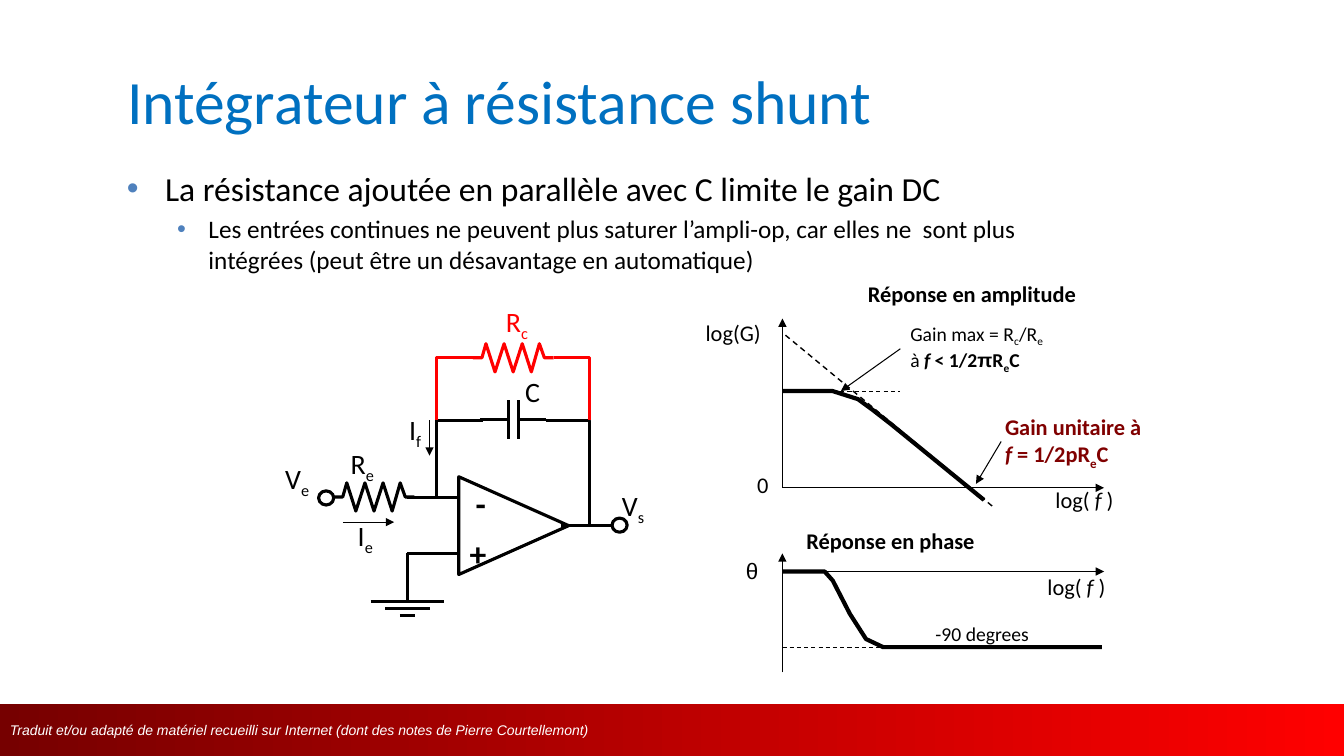
"""Build the slide on the integrator with a shunt resistor: circuit and frequency response."""
from dataclasses import dataclass

from lxml import etree
from pptx import Presentation
from pptx import util as u
from pptx.dml.color import RGBColor
from pptx.enum import dml, shapes, text
from pptx.oxml import ns


@dataclass(frozen=True)
class Theme:
    """Colours, fonts and sizes of the slide."""
    font: str = "Calibri"
    alt_font: str = "Arial"
    ink: str = "000000"
    title: str = "0070C0"
    bullet: str = "4F81BD"
    shunt: str = "FF0000"
    unity: str = "800000"
    dark: str = "760000"
    paper: str = "FFFFFF"
    title_size: int = 44
    body: int = 24
    sub_body: int = 18
    sign: int = 24
    symbol: int = 20
    label: int = 16
    note: int = 14
    footer: int = 10
    thin: float = 0.75
    guide: float = 1
    wire: float = 2.25
    curve: float = 3


T = Theme()
TITLE = "Intégrateur à résistance shunt"
FOOTER = "Traduit et/ou adapté de matériel recueilli sur Internet (dont des notes de Pierre Courtellemont)"
BODY = [
    ("La résistance ajoutée en parallèle avec C limite le gain DC", T.body, 0.38, 0.38),
    ("Les entrées continues ne peuvent plus saturer l’ampli-op, car elles ne  sont plus "
     "intégrées (peut être un désavantage en automatique)", T.sub_body, 0.81, 0.31),
]
LOG_F = [[("log( ", ""), ("f ", "i"), (")", "")]]
LABELS = [
    (6.9, 3.12, 0.75, 0.37, T.label, T.ink, [[("log(G)", "")]]),
    (10.37, 4.77, 0.78, 0.37, T.label, T.ink, LOG_F),
    (10.29, 5.64, 0.78, 0.37, T.label, T.ink, LOG_F),
    (9.87, 4.05, 1.56, 0.64, T.label, T.unity,
     [[("Gain unitaire à", "b")], [("f", "bi"), (" = 1/2pR", "b"), ("e", "bs"), ("C", "b")]]),
    (8.51, 2.73, 2.27, 0.37, T.label, T.ink, [[("Réponse en amplitude", "b")]]),
    (7.3, 5.48, 0.32, 0.37, T.label, T.ink, [[("θ", "a")]]),
    (7.9, 5.18, 1.88, 0.37, T.label, T.ink, [[("Réponse en phase", "b")]]),
    (9.18, 6.12, 1.13, 0.33, T.note, T.ink, [[("-90 degrees", "")]]),
    (8.93, 3.14, 1.54, 0.73, T.note, T.ink,
     [[("Gain max = R", ""), ("c", "s"), ("/R", ""), ("e", "s")],
      [("à ", ""), ("f", "bi"), (" < 1/2", "b"), ("π", "ab"), ("R", "b"), ("e", "bs"), ("C", "b")]]),
    (7.41, 4.62, 0.31, 0.37, T.label, T.ink, [[("0", "")]]),
    (3.38, 4.38, 0.51, 0.43, T.symbol, T.ink, [[("R", ""), ("e", "s")]]),
    (4.62, 4.74, 0.3, 0.5, T.sign, T.ink, [[("-", "b")]]),
    (4.56, 5.24, 0.37, 0.5, T.sign, T.ink, [[("+", "b")]]),
    (2.73, 4.53, 0.51, 0.43, T.symbol, T.ink, [[("V", ""), ("e", "s")]]),
    (6.07, 4.8, 0.43, 0.43, T.symbol, T.ink, [[("V", ""), ("s", "s")]]),
    (5.11, 3.67, 0.35, 0.43, T.symbol, T.ink, [[("C", "")]]),
    (3.45, 5.09, 0.43, 0.44, T.symbol, T.ink, [[("I", ""), ("e", "s")]]),
    (3.96, 4.04, 0.39, 0.43, T.symbol, T.ink, [[("I", ""), ("f", "s")]]),
    (4.92, 2.97, 0.5, 0.44, T.symbol, T.shunt, [[("R", ""), ("c", "s")]]),
]
ARROWS = [
    (7.76, 4.84, 10.95, 4.84), (7.76, 4.84, 7.76, 3.16),
    (7.76, 5.67, 10.95, 5.67), (7.76, 6.67, 7.76, 5.49),
    (9.93, 4.38, 9.68, 4.8), (8.93, 3.46, 8.34, 3.88),
    (3.4, 5.18, 3.91, 5.18), (4.26, 4.17, 4.26, 4.52),
]
GUIDES = [
    (7.76, 6.42, 10.93, 6.42, T.thin), (9.84, 5.02, 7.76, 3.3, T.guide),
    (7.76, 3.88, 8.93, 3.88, T.thin),
]
GROUND = [(5.97, 0.73), (6.04, 0.44), (6.11, 0.15)]
GROUND_X = 4.04
WIRES = [
    (4.04, 4.94, 4.55, 4.94), (4.04, 5.49, 4.55, 5.49), (4.04, 5.49, 4.04, 5.97),
    (5.56, 5.21, 6.07, 5.21), (5.04, 3.97, 5.04, 4.36), (5.14, 3.97, 5.14, 4.36),
    (4.76, 4.16, 5.04, 4.16), (5.14, 4.16, 5.42, 4.16),
]
PATHS = [
    ([(7.76, 3.88), (8.26, 3.88), (8.51, 3.96), (8.66, 4.07), (8.84, 4.21), (9.76, 4.96)], T.ink, T.curve),
    ([(7.76, 5.67), (8.18, 5.67), (8.26, 5.76), (8.43, 6.09), (8.59, 6.34), (8.76, 6.42), (10.93, 6.42)],
     T.ink, T.curve),
    ([(5.42, 4.17), (5.85, 4.17), (5.85, 5.21)], T.ink, T.wire),
    ([(4.79, 4.17), (4.33, 4.17), (4.33, 4.94)], T.ink, T.wire),
    ([(4.69, 3.55), (4.33, 3.55), (4.33, 4.17)], T.shunt, T.wire),
    ([(5.49, 3.55), (5.85, 3.55), (5.85, 4.17)], T.shunt, T.wire),
]
RESISTORS = [(3.31, 4.93, T.ink), (4.69, 3.55, T.shunt)]
ZIGZAG = list(zip((0, 0.09, 0.13, 0.22, 0.31, 0.4, 0.49, 0.58, 0.66, 0.71, 0.8),
                  (0, 0, -1, 1, -1, 1, -1, 1, -1, 0, 0)))
SWING = 0.14
OUTLINES = [
    (shapes.MSO_SHAPE.OVAL, 3.16, 4.87, 0.15, 0.14, 0),
    (shapes.MSO_SHAPE.OVAL, 6.07, 5.14, 0.15, 0.14, 0),
    (shapes.MSO_SHAPE.ISOSCELES_TRIANGLE, 4.61, 4.67, 0.97, 1.09, 90),
]


def cm(*inches):
    return [u.Cm(2.54 * v) for v in inches]


def style_run(r, size, color, flags=""):
    f = r.font
    f.name = T.alt_font if "a" in flags else T.font
    f.size, f.bold, f.italic = u.Pt(size), "b" in flags, "i" in flags
    f.color.rgb = RGBColor.from_string(color)
    if "s" in flags:
        r._r.get_or_add_rPr().set("baseline", "-25000")


def style_line(sp, color, width):
    sp.line.color.rgb = RGBColor.from_string(color)
    sp.line.width = u.Pt(width)


def add_line(slide, ends, width, arrow=False, dashed=False):
    c = slide.shapes.add_connector(shapes.MSO_CONNECTOR.STRAIGHT, *cm(*ends))
    style_line(c, T.ink, width)
    if dashed:
        c.line.dash_style = dml.MSO_LINE.DASH
    if arrow:
        etree.SubElement(c.line._get_or_add_ln(), ns.qn("a:tailEnd"), type="triangle")
    etree.SubElement(c._element.spPr, ns.qn("a:effectLst"))


def add_path(slide, points, color, width):
    pts = [tuple(cm(*p)) for p in points]
    fb = slide.shapes.build_freeform(*pts[0])
    fb.add_line_segments(pts[1:], close=False)
    sp = fb.convert_to_shape()
    sp.shadow.inherit = False
    sp.fill.background()
    style_line(sp, color, width)


def add_label(slide, x, y, w, h, size, color, lines):
    tf = slide.shapes.add_textbox(*cm(x, y, w, h)).text_frame
    tf.word_wrap = False
    for i, runs in enumerate(lines):
        p = tf.add_paragraph() if i else tf.paragraphs[0]
        for words, flags in runs:
            r = p.add_run()
            r.text = words
            style_run(r, size, color, flags)


def add_footer(slide):
    sp = slide.shapes.add_shape(shapes.MSO_SHAPE.RECTANGLE, *cm(0, 6.98, 13.33, 0.52))
    sp.shadow.inherit = False
    sp.line.fill.background()
    sp.fill.gradient()
    sp.fill.gradient_angle = 0
    for stop, color in zip(sp.fill.gradient_stops, (T.dark, T.shunt)):
        stop.color.rgb = RGBColor.from_string(color)
    tf = sp.text_frame
    tf.text, tf.word_wrap, tf.vertical_anchor = FOOTER, False, text.MSO_ANCHOR.MIDDLE
    p = tf.paragraphs[0]
    p.alignment = text.PP_ALIGN.LEFT
    style_run(p.runs[0], T.footer, T.paper, "ai")


def add_heading(slide):
    sp = slide.shapes.title
    sp.left, sp.top, sp.width, sp.height = cm(1.16, 0.37, 9.76, 1.25)
    tf = sp.text_frame
    tf.text, tf.vertical_anchor = TITLE, text.MSO_ANCHOR.MIDDLE
    p = tf.paragraphs[0]
    p.alignment = text.PP_ALIGN.LEFT
    style_run(p.runs[0], T.title_size, T.title)


def add_body(slide):
    tf = slide.shapes.add_textbox(*cm(1.16, 1.62, 9.3, 2.13)).text_frame
    tf.word_wrap = True
    for level, (words, size, margin, hang) in enumerate(BODY):
        p = tf.add_paragraph() if level else tf.paragraphs[0]
        p.text, p.level, p.space_before = words, level, u.Pt(0.2 * size)
        style_run(p.runs[0], size, T.ink)
        pPr = p._p.get_or_add_pPr()
        pPr.set("marL", str(cm(margin)[0]))
        pPr.set("indent", str(-cm(hang)[0]))
        clr = etree.SubElement(pPr, ns.qn("a:buClr"))
        etree.SubElement(clr, ns.qn("a:srgbClr"), val=T.bullet)
        etree.SubElement(pPr, ns.qn("a:buFont"), typeface=T.alt_font)
        etree.SubElement(pPr, ns.qn("a:buChar"), char="•")


def main():
    prs = Presentation()
    prs.slide_width, prs.slide_height = cm(13.33, 7.5)
    slide = prs.slides.add_slide(prs.slide_layouts[5])
    add_footer(slide)
    add_heading(slide)
    add_body(slide)
    for ends in ARROWS:
        add_line(slide, ends, T.thin, arrow=True)
    for *ends, width in GUIDES:
        add_line(slide, ends, width, dashed=True)
    bars = [(GROUND_X - w / 2, y, GROUND_X + w / 2, y) for y, w in GROUND]
    for ends in WIRES + bars:
        add_line(slide, ends, T.wire)
    zigzags = [([(x + dx, y + SWING * dy) for dx, dy in ZIGZAG], color, T.wire) for x, y, color in RESISTORS]
    for points, color, width in PATHS + zigzags:
        add_path(slide, points, color, width)
    for kind, x, y, w, h, turn in OUTLINES:
        sp = slide.shapes.add_shape(kind, *cm(x, y, w, h))
        sp.shadow.inherit = False
        sp.fill.background()
        sp.rotation = turn
        style_line(sp, T.ink, T.wire)
    for label in LABELS:
        add_label(slide, *label)
    prs.save("out.pptx")


if __name__ == "__main__":
    main()
